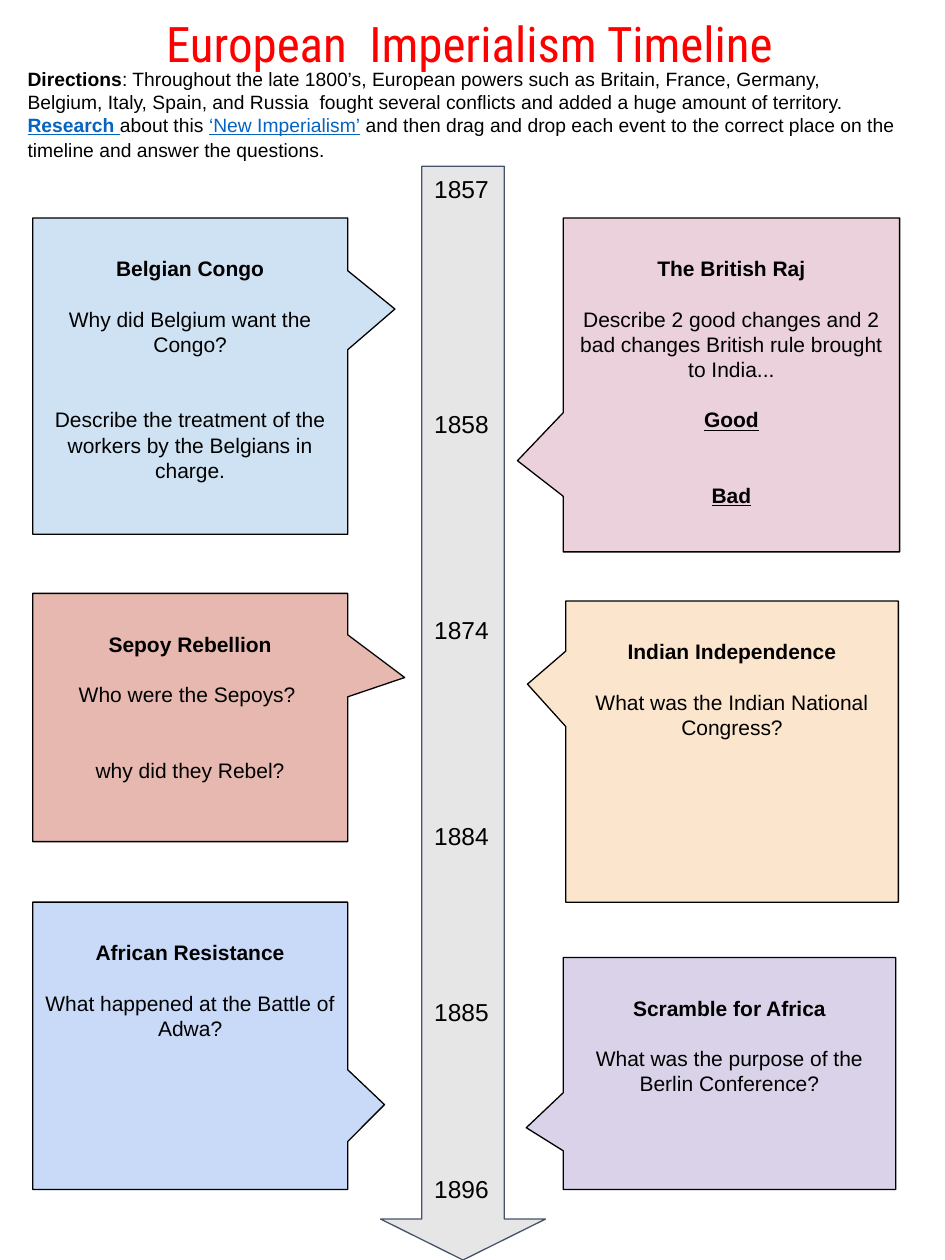
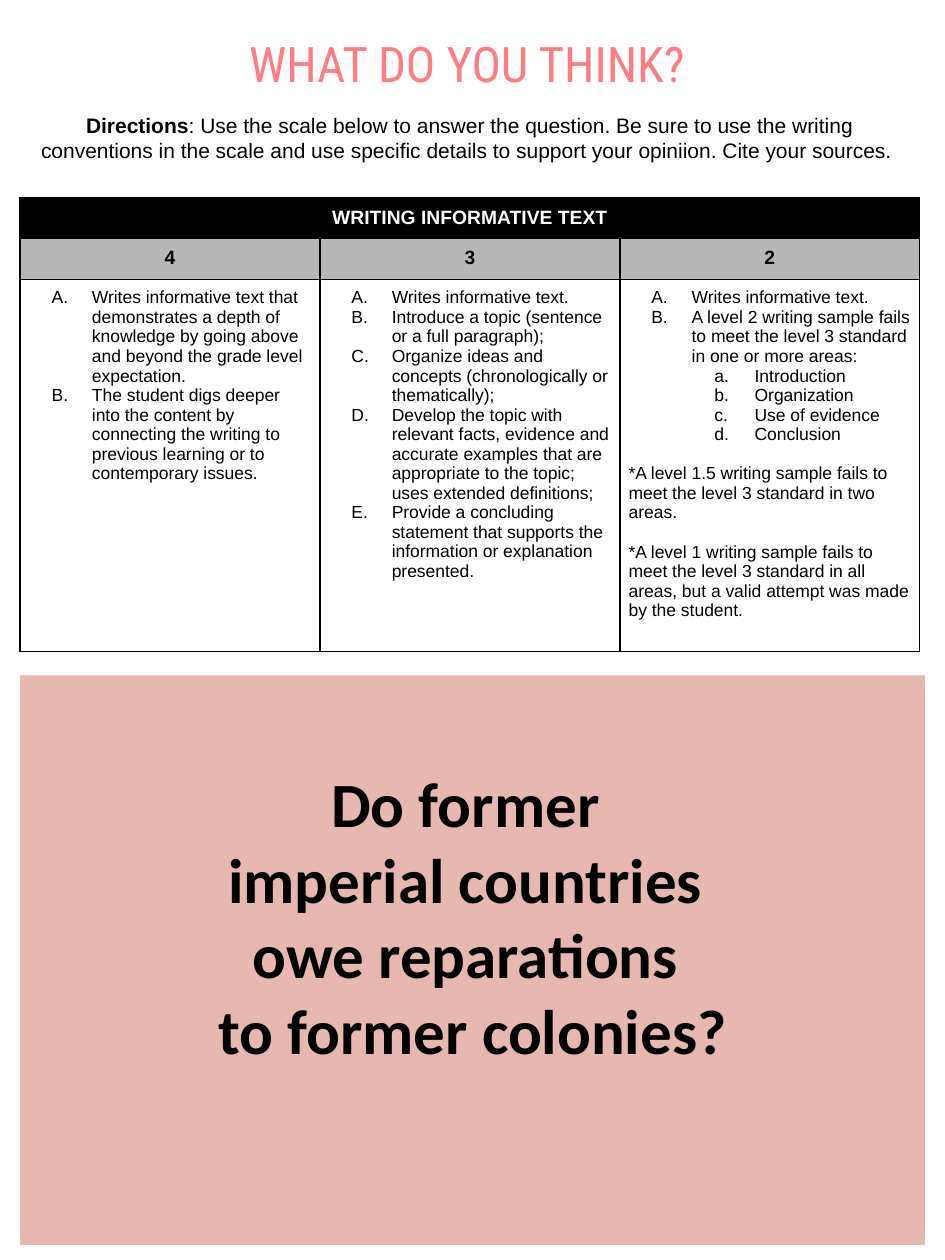
from dataclasses import dataclass
from typing import NamedTuple, Optional

from lxml import etree
from pptx import Presentation
from pptx.dml.color import RGBColor
from pptx.enum.shapes import MSO_SHAPE
from pptx.enum.text import MSO_ANCHOR, PP_ALIGN
from pptx.oxml.ns import qn
from pptx.util import Emu, Pt

SCALE = 9144
BLANK = 6

LEFT, CENTER = PP_ALIGN.LEFT, PP_ALIGN.CENTER
TOP, MIDDLE = MSO_ANCHOR.TOP, MSO_ANCHOR.MIDDLE
RECT, CALLOUT = MSO_SHAPE.RECTANGLE, MSO_SHAPE.RECTANGULAR_CALLOUT
DOWN_ARROW = MSO_SHAPE.DOWN_ARROW

BLACK = RGBColor(0x00, 0x00, 0x00)
WHITE = RGBColor(0xFF, 0xFF, 0xFF)
RED = RGBColor(0xFF, 0x00, 0x00)
CORAL = RGBColor(0xFF, 0x7C, 0x80)
LINK = RGBColor(0x05, 0x63, 0xC1)
SLATE = RGBColor(0x44, 0x54, 0x6A)
LIGHT_GRAY = RGBColor(0xE7, 0xE6, 0xE6)
GRAY = RGBColor(0xB7, 0xB7, 0xB7)
SALMON = RGBColor(0xE6, 0xB8, 0xAF)
PINK = RGBColor(0xEA, 0xD1, 0xDC)
PEACH = RGBColor(0xFC, 0xE5, 0xCD)
SKY = RGBColor(0xCF, 0xE2, 0xF3)
PERIWINKLE = RGBColor(0xC9, 0xDA, 0xF8)
LAVENDER = RGBColor(0xD9, 0xD2, 0xE9)

BODY_FONT, TITLE_FONT, QUESTION_FONT = "Arial", "Roboto Condensed", "Calibri"
UPPER, LOWER = "alphaUcPeriod", "alphaLcPeriod"


class Box(NamedTuple):
    x: int
    y: int
    w: int
    h: int


class Run(NamedTuple):
    text: str
    size: float = 12
    bold: bool = False
    underline: bool = False
    color: RGBColor = BLACK
    font: str = BODY_FONT


class Para(NamedTuple):
    runs: list[Run]
    align: PP_ALIGN = CENTER
    before: float = 0
    numbering: Optional[str] = None


class Insets(NamedTuple):
    left: int = 10
    top: int = 10
    right: int = 10
    bottom: int = 10


@dataclass
class Callout:
    box: Box
    tip: tuple[float, float]
    fill: RGBColor
    title: str
    prompts: list[tuple[int, str]]
    emphasis: tuple[str, ...] = ()


CALLOUT_LINE = 14.4
CALLOUTS = [
    Callout(Box(26, 471, 250, 197), (0.681, -0.161), SALMON, "Sepoy Rebellion",
            [(1, "Who were the Sepoys? "), (2, "why did they Rebel?")]),
    Callout(Box(447, 173, 267, 265), (-0.636, 0.227), PINK, "The British Raj",
            [(1, "Describe 2 good changes and 2 bad changes British rule brought to India..."),
             (1, "Good"), (2, "Bad")], ("Good", "Bad")),
    Callout(Box(449, 477, 264, 239), (-0.615, -0.224), PEACH, "Indian Independence",
            [(1, "What was the Indian National Congress?")]),
    Callout(Box(26, 173, 250, 251), (0.65, -0.212), SKY, "Belgian Congo",
            [(1, "Why did Belgium want the Congo?"),
             (2, "Describe the treatment of the workers by the Belgians in charge.")]),
    Callout(Box(26, 716, 250, 228), (0.617, 0.205), PERIWINKLE, "African Resistance",
            [(1, "What happened at the Battle of Adwa?")]),
    Callout(Box(447, 760, 264, 184), (-0.611, 0.234), LAVENDER, "Scramble for Africa",
            [(1, "What was the purpose of the Berlin Conference?")]),
]

YEAR_LINE = 16.8
YEARS = [("1857", 0), ("1858", 7), ("1874", 6), ("1884", 6), ("1885", 5), ("1896", 5)]

RUBRIC_LINE = 11.2
RUBRIC = {
    "4": [
        (UPPER, "Writes informative text that demonstrates a depth of knowledge by going "
                "above and beyond the grade level expectation."),
        (UPPER, "The student digs deeper into the content by connecting the writing to "
                "previous learning or to contemporary issues."),
    ],
    "3": [
        (UPPER, "Writes informative text."),
        (UPPER, "Introduce a topic (sentence or a full paragraph);"),
        (UPPER, "Organize ideas and concepts (chronologically or thematically);"),
        (UPPER, "Develop the topic with relevant facts, evidence and accurate examples that "
                "are appropriate to the topic; uses extended definitions;"),
        (UPPER, "Provide a concluding statement that supports the information or "
                "explanation presented."),
    ],
    "2": [
        (UPPER, "Writes informative text."),
        (UPPER, "A level 2 writing sample fails to meet the level 3 standard in one or more areas:"),
        (LOWER, "Introduction"),
        (LOWER, "Organization"),
        (LOWER, "Use of evidence"),
        (LOWER, "Conclusion"),
        (None, "*A level 1.5 writing sample fails to meet the level 3 standard in two areas."),
        (None, "*A level 1 writing sample fails to meet the level 3 standard in all areas, "
               "but a valid attempt was made by the student."),
    ],
}


def px(value: int) -> Emu:
    return Emu(value * SCALE)


def place(box: Box) -> list[Emu]:
    return [px(v) for v in box]


def set_format(target, values: dict) -> None:
    for name, value in values.items():
        setattr(target, name, value)


def margins(insets: Insets) -> dict:
    return {f"margin_{side}": px(v) for side, v in insets._asdict().items()}


def number_paragraph(p, scheme: str) -> None:
    p.level = int(scheme == LOWER)
    pPr = p._p.get_or_add_pPr()
    pPr.set("marL", str(px(100 if scheme == LOWER else 50)))
    pPr.set("indent", str(px(-32)))
    etree.SubElement(pPr, qn("a:buFont")).set("typeface", BODY_FONT)
    etree.SubElement(pPr, qn("a:buAutoNum")).set("type", scheme)


def write(tf, paras: list[Para]) -> None:
    for i, para in enumerate(paras):
        p = tf.paragraphs[0] if i == 0 else tf.add_paragraph()
        set_format(p, {"alignment": para.align, "space_before": Pt(para.before)})
        if para.numbering:
            number_paragraph(p, para.numbering)
        for run in para.runs:
            for n, line in enumerate(run.text.split("\n")):
                if n:
                    p.add_line_break()
                r = p.add_run()
                r.text = line
                set_format(r.font, {"name": run.font, "size": Pt(run.size),
                                    "bold": run.bold, "underline": run.underline})
                r.font.color.rgb = run.color


def fill_frame(sp, paras: list[Para], insets: Insets, anchor: MSO_ANCHOR) -> None:
    tf = sp.text_frame
    set_format(tf, {"word_wrap": True, "vertical_anchor": anchor, **margins(insets)})
    write(tf, paras)


def add_text(s, box: Box, paras: list[Para], insets: Insets = Insets(),
             anchor: MSO_ANCHOR = TOP) -> None:
    fill_frame(s.shapes.add_textbox(*place(box)), paras, insets, anchor)


def add_title(s, box: Box, text: str, color: RGBColor) -> None:
    run = Run(text, size=28, color=color, font=TITLE_FONT)
    add_text(s, box, [Para([run])], Insets(top=5, bottom=5))


def add_block(s, kind: MSO_SHAPE, box: Box, fill: RGBColor, line: Optional[RGBColor],
              paras: list[Para], insets: Insets, adjust: tuple[float, ...] = ()) -> None:
    sp = s.shapes.add_shape(kind, *place(box))
    sp.shadow.inherit = False
    sp.fill.solid()
    sp.fill.fore_color.rgb = fill
    if line is None:
        sp.line.fill.background()
    else:
        sp.line.color.rgb = line
        sp.line.width = Pt(0.75)
    for i, value in enumerate(adjust):
        sp.adjustments[i] = value
    fill_frame(sp, paras, insets, TOP)


def add_callout(s, callout: Callout) -> None:
    paras = [Para([Run(callout.title, bold=True)])]
    for blanks, text in callout.prompts:
        strong = text in callout.emphasis
        paras.append(Para([Run(text, bold=strong, underline=strong)],
                          before=blanks * CALLOUT_LINE))
    add_block(s, CALLOUT, callout.box, callout.fill, BLACK, paras, Insets(top=30), callout.tip)


def border_cell(cell) -> None:
    tcPr = cell._tc.get_or_add_tcPr()
    for i, side in enumerate(("lnL", "lnR", "lnT", "lnB")):
        ln = etree.Element(qn(f"a:{side}"), w=str(Pt(1)))
        fill = etree.SubElement(ln, qn("a:solidFill"))
        etree.SubElement(fill, qn("a:srgbClr")).set("val", str(BLACK))
        tcPr.insert(i, ln)


def fill_cell(cell, color: RGBColor, paras: list[Para]) -> None:
    set_format(cell, margins(Insets(7, 7, 7, 7)))
    cell.fill.solid()
    cell.fill.fore_color.rgb = color
    border_cell(cell)
    write(cell.text_frame, paras)


def add_rubric(s) -> None:
    table = s.shapes.add_table(3, len(RUBRIC), *place(Box(16, 157, 714, 340))).table
    set_format(table, {"first_row": False, "horz_banding": False})
    for row, height in zip(table.rows, (31, 31, 278)):
        row.height = px(height)
    for column in table.columns:
        column.width = px(238)
    table.cell(0, 0).merge(table.cell(0, len(RUBRIC) - 1))
    for col, (score, items) in enumerate(RUBRIC.items()):
        heading = [] if col else [
            Para([Run("WRITING INFORMATIVE TEXT", size=11, bold=True, color=WHITE)])]
        criteria = [Para([Run(text, size=10)], LEFT, 0 if scheme else RUBRIC_LINE, scheme)
                    for scheme, text in items]
        fill_cell(table.cell(0, col), BLACK, heading)
        fill_cell(table.cell(1, col), GRAY, [Para([Run(score, size=11, bold=True)])])
        fill_cell(table.cell(2, col), WHITE, criteria)


def build_timeline(s) -> None:
    add_title(s, Box(21, 6, 703, 57), "European  Imperialism Timeline", RED)
    add_text(s, Box(12, 48, 712, 86), [Para([
        Run("Directions", 11, True),
        Run(": Throughout the late 1800’s, European powers such as Britain, France, Germany, "
            "Belgium, Italy, Spain, and Russia  fought several conflicts and added a huge "
            "amount of territory. ", 11),
        Run("Research ", 11, True, True, LINK),
        Run("about this ", 11),
        Run("‘New Imperialism’", 11, False, True, LINK),
        Run(" and then drag and drop each event to the correct place on the timeline and "
            "answer the questions.", 11),
        Run(" "),
    ], LEFT)], anchor=MIDDLE)
    years = [Para([Run(year, 14)], LEFT, blanks * YEAR_LINE) for year, blanks in YEARS]
    add_block(s, DOWN_ARROW, Box(302, 132, 131, 868), LIGHT_GRAY, SLATE, years,
              Insets(top=6, bottom=0), (0.5, 0.248))
    for callout in CALLOUTS:
        add_callout(s, callout)


def build_opinion(s) -> None:
    add_rubric(s)
    question = Run("Do former \nimperial countries \nowe reparations \nto former colonies?",
                   36, True, font=QUESTION_FONT)
    add_block(s, RECT, Box(16, 536, 718, 452), SALMON, None, [Para([question])], Insets(top=71))
    add_title(s, Box(40, 22, 670, 57), "WHAT DO YOU THINK? ", CORAL)
    add_text(s, Box(14, 79, 718, 74), [Para([
        Run("Directions", bold=True),
        Run(": Use the scale below to answer the question. Be sure to use the writing "
            "conventions in the scale and use specific details to support your opiniion. "
            "Cite your sources. "),
    ])])


def main() -> None:
    prs = Presentation()
    set_format(prs, {"slide_width": px(750), "slide_height": px(1000)})
    for build in (build_timeline, build_opinion):
        build(prs.slides.add_slide(prs.slide_layouts[BLANK]))
    prs.save("out.pptx")


if __name__ == "__main__":
    main()
